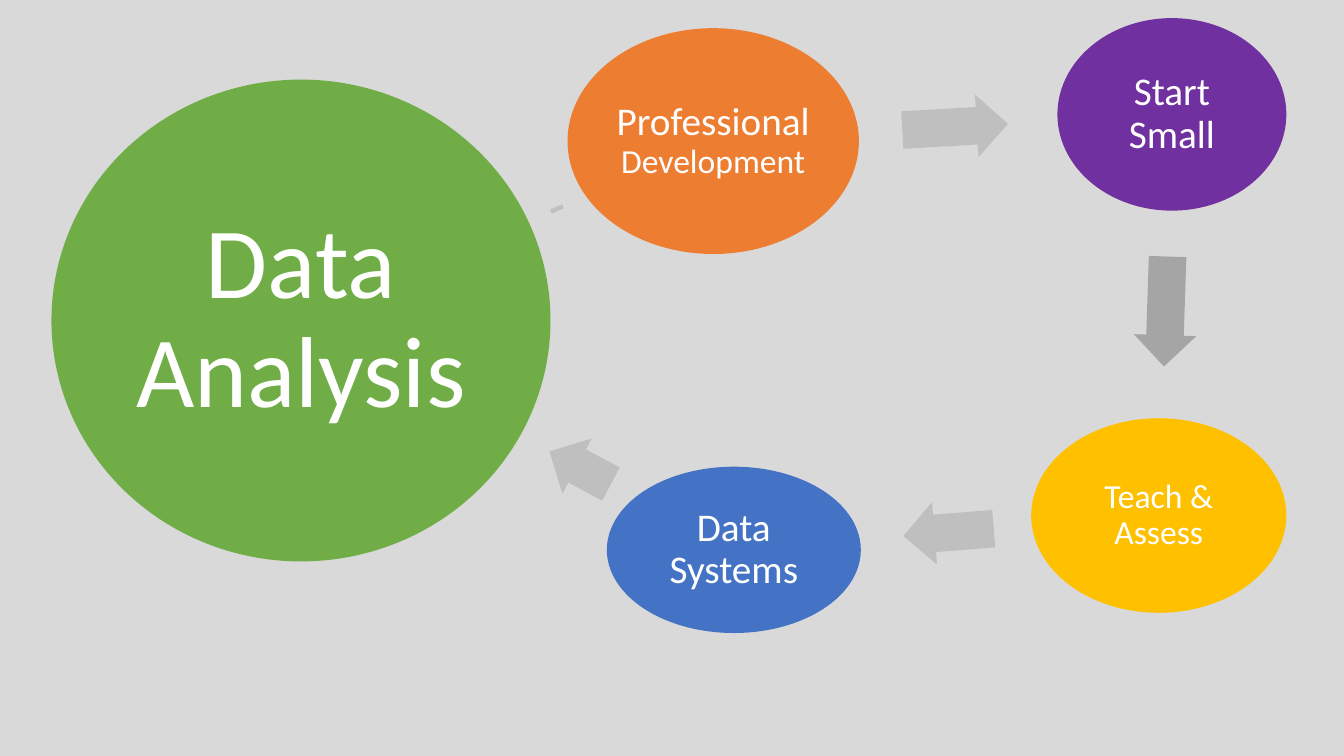
import pptx
import pptx.dml.color
import pptx.enum.shapes
import pptx.enum.text
import pptx.util

RGBColor = pptx.dml.color.RGBColor
Shape = pptx.enum.shapes.MSO_SHAPE
BACKGROUND = RGBColor(0xD9, 0xD9, 0xD9)
WHITE = RGBColor(0xFF, 0xFF, 0xFF)
ORANGE = RGBColor(0xED, 0x7D, 0x31)
PURPLE = RGBColor(0x70, 0x30, 0xA0)
YELLOW = RGBColor(0xFF, 0xC0, 0x00)
BLUE = RGBColor(0x44, 0x72, 0xC4)
GREEN = RGBColor(0x70, 0xAD, 0x47)
LIGHT_GREY = RGBColor(0xBF, 0xBF, 0xBF)
MID_GREY = RGBColor(0xA5, 0xA5, 0xA5)

# Boxes are left, top, width, height in percent of the cycle's area.
STAGES = [
    ((42.23, 3.73, 21.68, 29.87), ORANGE, 0.04,
     [("Professional", 28), (" Development", 24)]),
    ((78.68, 2.4, 17.03, 25.47), PURPLE, 0.04, [("Start Small", 28)]),
    ((76.73, 55.33, 18.98, 25.73), YELLOW, 0.03, [("Teach & Assess", 24)]),
    ((45.15, 61.73, 18.9, 22), BLUE, 0.04, [("Data Systems", 28)]),
    ((3.83, 10.53, 37.13, 63.73), GREEN, 0.1, [("Data Analysis", 72)]),
]
STEPS = [
    ((67.13, 12.67, 7.88, 8.27), 356.7, LIGHT_GREY),
    ((82.65, 37.07, 8.18, 8.27), 91.9, MID_GREY),
    ((67.2, 66.27, 6.75, 8.27), 175.4, LIGHT_GREY),
    ((40.58, 57.73, 5.18, 8.27), 207.9, LIGHT_GREY),
    ((40.88, 27.2, 1.05, 0.93), 156.4, LIGHT_GREY),
]


def place(area, shares):
    """Turn percentages of an area into a box on the slide."""
    left, top, width, height = area
    x, y, w, h = (share / 100 for share in shares)
    return (int(left + x * width), int(top + y * height),
            int(w * width), int(h * height))


def add_solid(slide, preset, box, color):
    """Add a flat preset shape without outline or shadow."""
    solid = slide.shapes.add_shape(preset, *box)
    solid.shadow.inherit = False
    solid.fill.solid()
    solid.fill.fore_color.rgb = color
    solid.line.fill.background()
    return solid


def add_stage(slide, box, color, inset, wording):
    """Add one labelled ellipse of the cycle."""
    stage = add_solid(slide, Shape.OVAL, box, color)
    label = stage.text_frame
    label.word_wrap = True
    label.vertical_anchor = pptx.enum.text.MSO_ANCHOR.MIDDLE
    label.margin_left = label.margin_right = pptx.util.Inches(inset)
    label.margin_top = label.margin_bottom = pptx.util.Inches(inset)
    line = label.paragraphs[0]
    line.alignment = pptx.enum.text.PP_ALIGN.CENTER
    line.line_spacing = 0.9
    for words, size in wording:
        run = line.add_run()
        run.text = words
        run.font.name = "Calibri"
        run.font.size = pptx.util.Pt(size)
        run.font.color.rgb = WHITE


def add_step(slide, box, angle, color):
    """Add one arrow that leads to the next stage."""
    step = add_solid(slide, Shape.RIGHT_ARROW, box, color)
    step.adjustments[0] = 0.6
    step.adjustments[1] = 0.5
    step.rotation = angle


def add_cycle(slide, area):
    """Draw the stages and the arrows between them inside an area."""
    for (shares, color, inset, wording), (step, angle, grey) in zip(STAGES, STEPS):
        add_stage(slide, place(area, shares), color, inset, wording)
        add_step(slide, place(area, step), angle, grey)


def main():
    """Build and save the presentation."""
    deck = pptx.Presentation()
    deck.slide_width = pptx.util.Inches(13.33)
    deck.slide_height = pptx.util.Inches(7.5)
    slide = deck.slides.add_slide(deck.slide_layouts.get_by_name("Blank"))
    slide.background.fill.solid()
    slide.background.fill.fore_color.rgb = BACKGROUND
    add_cycle(slide, (0, 0, deck.slide_width, deck.slide_height))
    deck.save("out.pptx")


if __name__ == "__main__":
    main()
